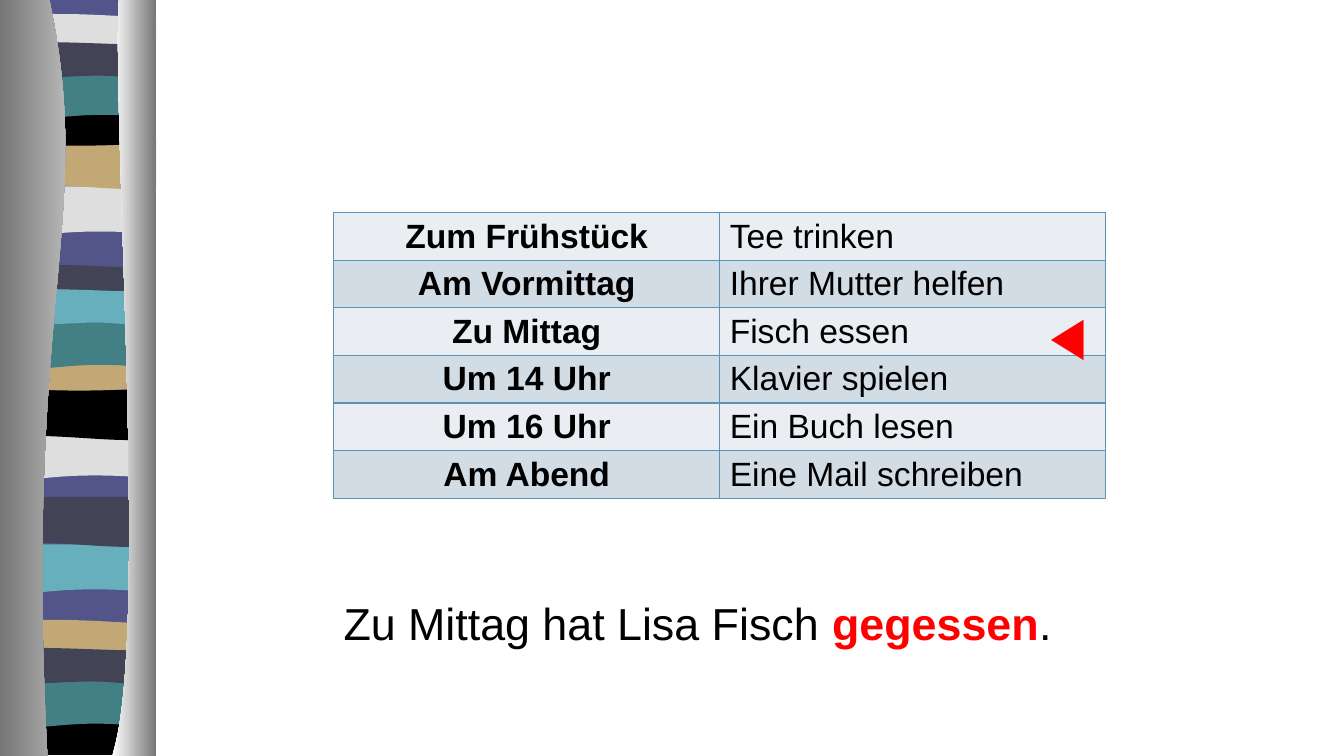
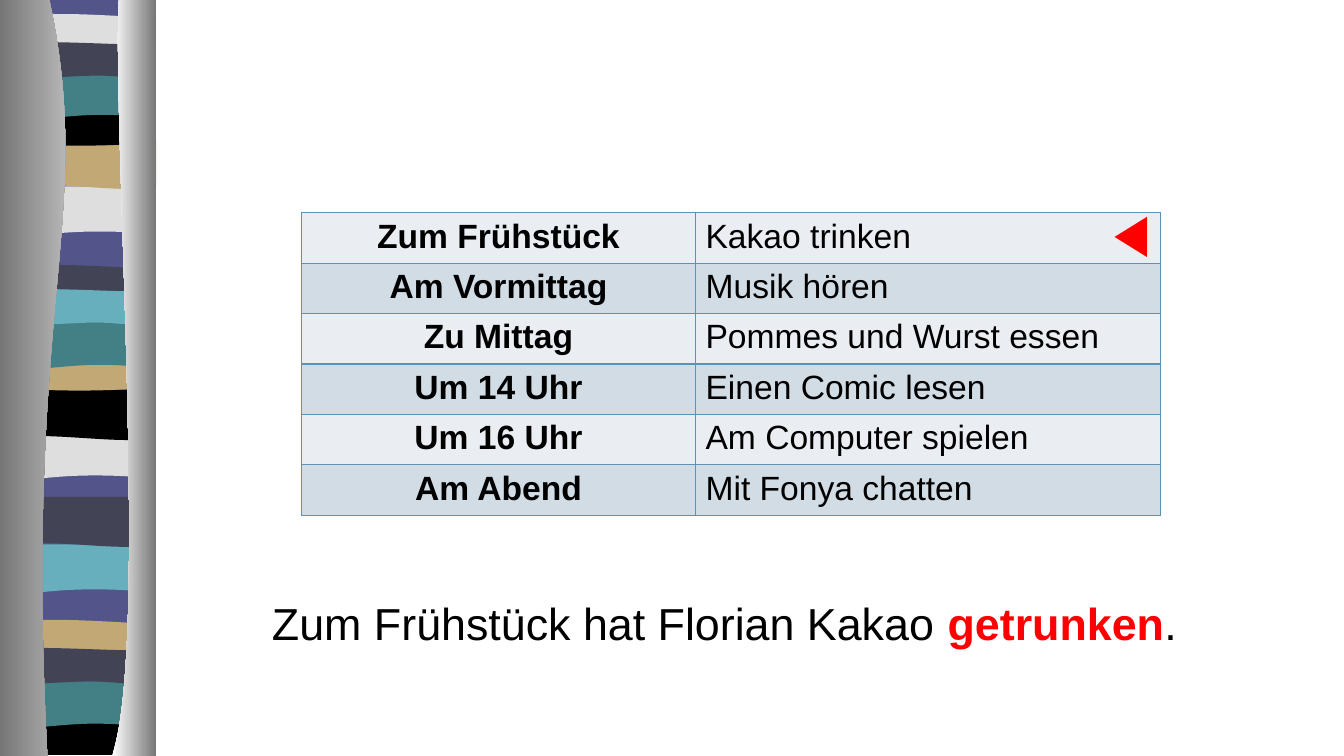
"""Two German perfect-tense slides: a daily schedule table and an example sentence."""
from lxml.etree import SubElement
from pptx import Presentation
from pptx.dml.color import RGBColor
from pptx.enum.text import MSO_AUTO_SIZE as AutoSize, PP_ALIGN as Align
from pptx.oxml.ns import qn
from pptx.util import Pt

PX = 9144
FONT = "Arial"
BLACK = RGBColor(0x00, 0x00, 0x00)
WHITE = RGBColor(0xFF, 0xFF, 0xFF)
RED = RGBColor(0xFF, 0x00, 0x00)
PURPLE = RGBColor(0x53, 0x54, 0x8A)
SILVER = RGBColor(0xDE, 0xDE, 0xDE)
TAN = RGBColor(0xC2, 0xA8, 0x74)
TEAL = RGBColor(0x43, 0x80, 0x86)
NAVY = RGBColor(0x42, 0x44, 0x56)
AQUA = RGBColor(0x67, 0xAF, 0xBD)
GREY = RGBColor(0x76, 0x76, 0x76)
LIGHT_GREY = RGBColor(0xD3, 0xD3, 0xD3)
ROW_FILLS = (RGBColor(0xEA, 0xEE, 0xF3), RGBColor(0xD2, 0xDC, 0xE5))
BORDER = RGBColor(0x5C, 0x92, 0xB5)

# Each outline step is a line (x, y) or a cubic curve (x1, y1, x2, y2, x, y).
BACKDROP = [(145, 0), (145, 748), (0, 748), (0, 0)]
SWELL = [(145, 0), (145, 47), (45, 39, 24, 55, 0, 47), (0, 0)]
WAVE = [(145, 0), (145, 47), (120, 55, 45, 41, 0, 47), (0, 0)]
BULGE = [(145, 5), (145, 29), (121, 33, 24, 33, 0, 29), (0, 5),
         (9, 0, 32, 1, 56, 1), (80, 1, 126, 4, 145, 5)]
SAG = [(145, 0), (145, 32), (121, 38, 24, 38, 0, 32), (0, 0), (89, 5, 115, 0, 145, 0)]
ARCH = [(144, 0), (144, 48), (122, 42, 113, 42, 89, 42), (64, 42, 22, 48, 0, 48), (0, 0)]
RIPPLE = [(144, 5), (144, 36), (135, 41, 113, 36, 89, 36), (65, 36, 15, 41, 0, 36),
          (0, 5), (20, 0, 98, 5, 122, 5), (146, 5, 140, 5, 144, 5)]
FOOT = [(145, 0), (145, 37), (2, 37), (0, 0), (89, 5, 115, 0, 145, 0)]
LEFT_CURTAIN = [(49, 0), (95, 216, 23, 296, 47, 750), (0, 750), (0, 0)]
RIGHT_CURTAIN = [(118, 0), (111, 125, 149, 646, 111, 750), (155, 750), (155, 0)]

BANDS = [
    (BACKDROP, 8, 0, PURPLE),
    (SWELL, 7, 185, SILVER), (WAVE, 10, 138, TAN), (BULGE, 10, 13, SILVER),
    (SAG, 7, 108, BLACK), (ARCH, 8, 72, TEAL), (RIPPLE, 8, 39, NAVY),
    (SWELL, 3, 427, SILVER), (WAVE, 6, 387, BLACK), (BULGE, 6, 262, NAVY),
    (SAG, 6, 351, TAN), (ARCH, 6, 320, TEAL), (RIPPLE, 6, 284, AQUA),
    (SWELL, 2, 540, AQUA), (WAVE, 5, 493, NAVY), (BULGE, 4, 614, TAN),
    (FOOT, 3, 712, BLACK), (ARCH, 1, 676, TEAL), (RIPPLE, 1, 640, NAVY),
    (LEFT_CURTAIN, 0, 0, (GREY, LIGHT_GREY)),
    (RIGHT_CURTAIN, 0, 0, (WHITE, GREY)),
]

TIMES = ["Zum Frühstück", "Am Vormittag", "Zu Mittag", "Um 14 Uhr", "Um 16 Uhr", "Am Abend"]
SCHEDULES = [
    {
        "activities": ["Tee trinken", "Ihrer Mutter helfen", "Fisch essen",
                       "Klavier spielen", "Ein Buch lesen", "Eine Mail schreiben"],
        "left": 331, "columns": (383, 383),
        "pointer": (1018, 305, 70, 77), "sentence_box": (331, 586, 750, 64),
        "sentence": ("Zu Mittag hat Lisa Fisch ", "gegessen"),
    },
    {
        "activities": ["Kakao trinken", "Musik hören", "Pommes und Wurst essen",
                       "Einen Comic lesen", "Am Computer spielen", "Mit Fonya chatten"],
        "left": 299, "columns": (391, 461),
        "pointer": (1081, 203, 70, 77), "sentence_box": (260, 586, 938, 64),
        "sentence": ("Zum Frühstück hat Florian Kakao ", "getrunken"),
    },
]


def add_band(group, outline, left, top):
    """Draw an outline, joining the three points of each curve into a Bézier."""
    points = [(left + step[i], top + step[i + 1])
              for step in outline for i in range(0, len(step), 2)]
    builder = group.shapes.build_freeform(*points[0], scale=PX)
    builder.add_line_segments(points[1:], close=True)
    band = builder.convert_to_shape()
    segments = iter(list(band.element.iter(qn("a:lnTo"))))
    for step in outline[1:]:
        segment = next(segments)
        if len(step) == 6:
            segment.addprevious(segment.makeelement(qn("a:cubicBezTo")))
            curve = segment.getprevious()
            for corner in (segment, next(segments), next(segments)):
                curve.append(corner[0])
                corner.getparent().remove(corner)
    return band


def add_text(slide, box, size, parts):
    """Add a one-line text box made of (text, colour, bold) parts."""
    label = slide.shapes.add_textbox(*(n * PX for n in box))
    label.text_frame.word_wrap = True
    label.text_frame.auto_size = AutoSize.SHAPE_TO_FIT_TEXT
    for text, color, bold in parts:
        run = label.text_frame.paragraphs[0].add_run()
        run.text = text
        run.font.name, run.font.size, run.font.bold = FONT, Pt(size), bold
        run.font.color.rgb = color
    return label


deck = Presentation()
deck.slide_width, deck.slide_height = 12192000, 750 * PX
layout = deck.slide_layouts[6]
for placeholder in list(layout.placeholders):
    layout.shapes.element.remove(placeholder.element)
slides = [deck.slides.add_slide(layout) for _ in SCHEDULES]

curtain = slides[0].shapes.add_group_shape()
for outline, left, top, color in BANDS:
    band = add_band(curtain, outline, left, top)
    band.shadow.inherit = False
    band.line.fill.background()
    if isinstance(color, RGBColor):
        band.fill.solid()
        band.fill.fore_color.rgb = color
    else:
        band.fill.gradient()
        band.fill.gradient_angle = 0
        for stop, stop_color in zip(band.fill.gradient_stops, color):
            stop.color.rgb = stop_color
layout.shapes.element.append(curtain.element)

for slide, schedule in zip(slides, SCHEDULES):
    widths = schedule["columns"]
    table = slide.shapes.add_table(
        len(TIMES), 2, schedule["left"] * PX, 211 * PX,
        sum(widths) * PX, len(TIMES) * 41 * PX).table
    table.first_row = table.horz_banding = False
    for column, width in zip(table.columns, widths):
        column.width = width * PX
    for row, texts in enumerate(zip(TIMES, schedule["activities"])):
        for col, text in enumerate(texts):
            cell = table.cell(row, col)
            cell.text_frame.text = text
            paragraph = cell.text_frame.paragraphs[0]
            paragraph.alignment = Align.LEFT if col else Align.CENTER
            font = paragraph.runs[0].font
            font.name, font.size, font.bold = FONT, Pt(24), col == 0
            font.color.rgb = BLACK
            properties = cell._tc.get_or_add_tcPr()
            for side in ("a:lnL", "a:lnR", "a:lnT", "a:lnB"):
                edge = SubElement(properties, qn(side), w=str(Pt(1)))
                paint = SubElement(edge, qn("a:solidFill"))
                SubElement(paint, qn("a:srgbClr"), val=str(BORDER))
            cell.fill.solid()
            cell.fill.fore_color.rgb = ROW_FILLS[row % 2]

    pointer = add_text(slide, schedule["pointer"], 40, [("▶", RED, False)])
    pointer.rotation = 180
    opening, participle = schedule["sentence"]
    add_text(slide, schedule["sentence_box"], 32,
             [(opening, BLACK, False), (participle, RED, True), (".", BLACK, False)])

deck.save("out.pptx")
